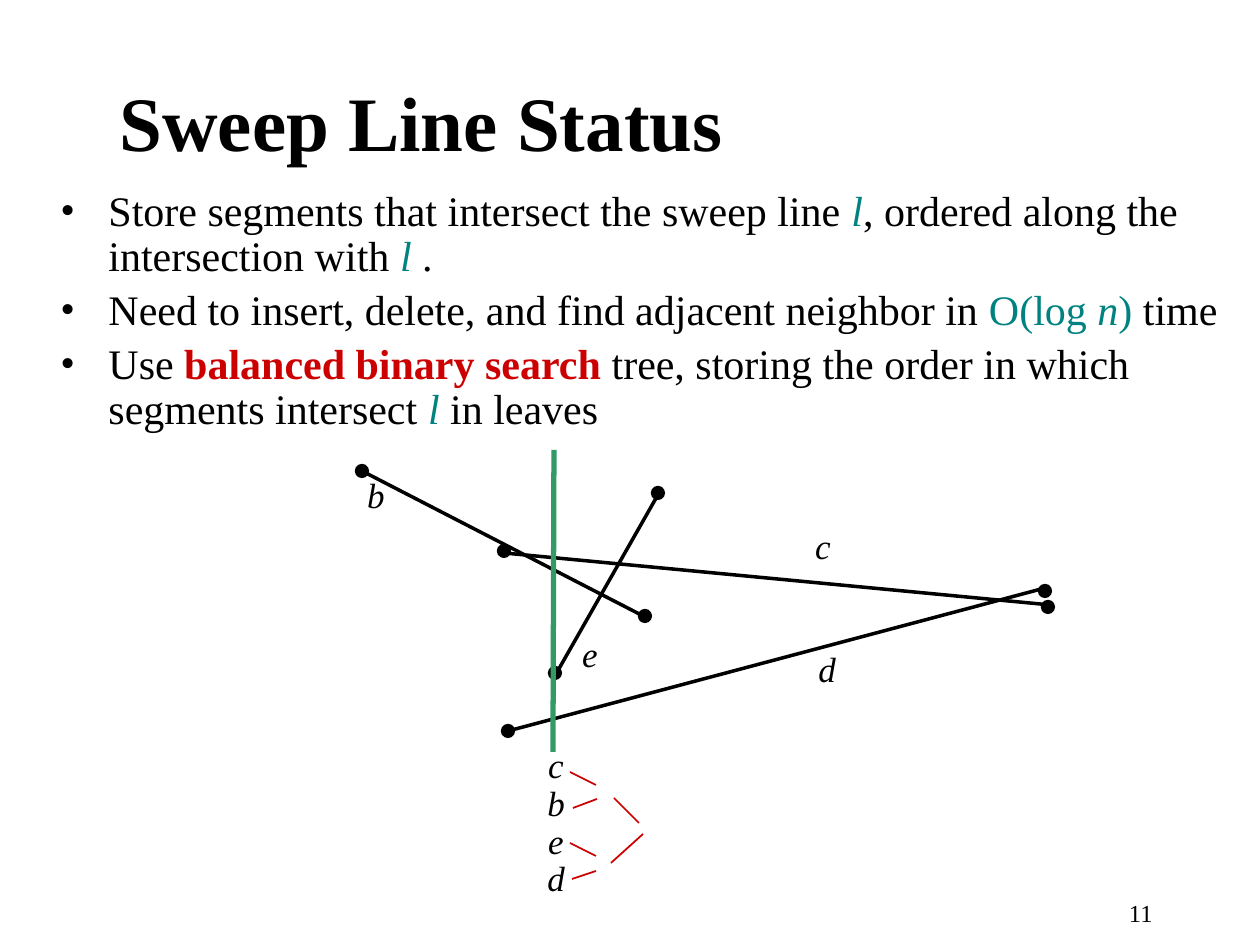
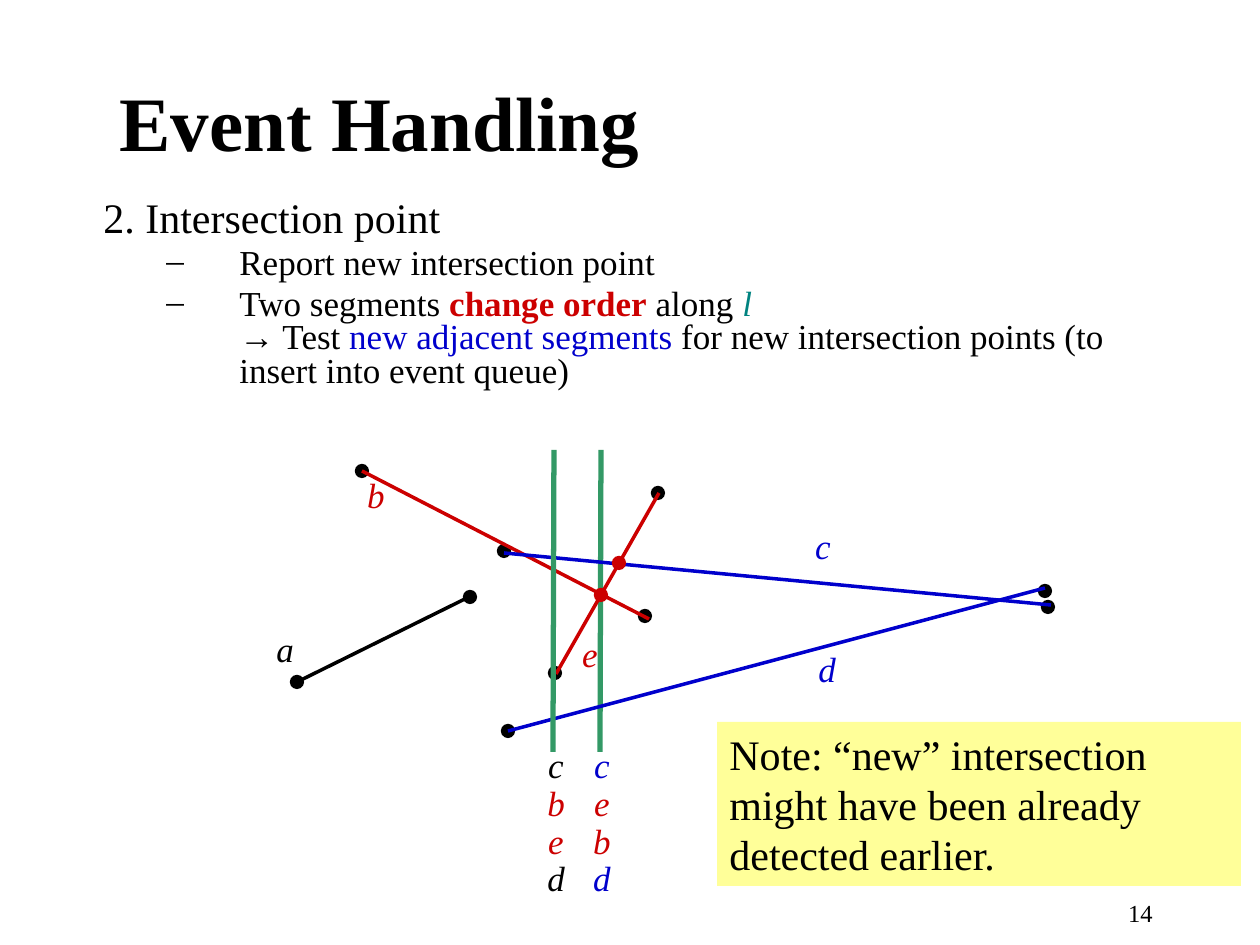
from pptx import Presentation
from pptx.dml.color import RGBColor
from pptx.enum.shapes import MSO_CONNECTOR, MSO_SHAPE
from pptx.enum.text import MSO_ANCHOR, PP_ALIGN
from pptx.oxml.ns import qn
from pptx.util import Emu, Pt
from lxml.etree import SubElement

BLACK = RGBColor(0x00, 0x00, 0x00)
TEAL = RGBColor(0x00, 0x83, 0x80)
RED = RGBColor(0xCC, 0x00, 0x00)
BLUE = RGBColor(0x00, 0x00, 0xCC)
GREEN = RGBColor(0x33, 0x99, 0x66)
YELLOW = RGBColor(0xFF, 0xFF, 0x99)
FONT = "Times New Roman"
PX = 914400 / 126
DOT = 13

SEGMENTS = {
    "a": ((297, 682), (471, 596)),
    "b": ((362, 471), (649, 619)),
    "c": ((504, 553), (1051, 605)),
    "d": ((508, 731), (1045, 588)),
    "e": ((556, 674), (659, 493)),
}
ENDPOINTS = {
    "a": ((297, 682), (470, 597)),
    "b": ((362, 471), (645, 616)),
    "c": ((504, 551), (1048, 607)),
    "d": ((508, 731), (1045, 591)),
    "e": ((555, 673), (658, 493)),
}
LABELS = {"a": (258, 621), "b": (349, 467), "c": (796, 518),
          "d": (800, 641), "e": (563, 626)}
TREE_BRANCHES = [
    ((570, 772), (596, 785)), ((573, 808), (597, 799)),
    ((570, 843), (596, 856)), ((572, 879), (596, 871)),
    ((614, 798), (639, 823)), ((611, 863), (643, 834)),
]

# A run is (text, colour, style); a paragraph is (size, margin, indent, bullet, runs).
SLIDES = [
    {
        "title": "Sweep Line Status",
        "number": "11",
        "body_at": (48, 184, 1188, 344),
        "line_spacing": 0.9,
        "body": [
            (24, 48, -48, "•", [
                ("Store segments that intersect the sweep line ", BLACK, ""),
                ("l", TEAL, "i"),
                (", ordered along the intersection with ", BLACK, ""),
                ("l", TEAL, "i"), (" .", BLACK, "")]),
            (24, 48, -48, "•", [
                ("Need to insert, delete, and find adjacent neighbor in ", BLACK, ""),
                ("O(log ", TEAL, ""), ("n", TEAL, "i"), (")", TEAL, ""),
                (" time", BLACK, "")]),
            (24, 48, -48, "•", [
                ("Use ", BLACK, ""), ("balanced binary search", RED, "b"),
                (" tree, storing the order in which segments intersect ", BLACK, ""),
                ("l ", TEAL, "i"), ("in leaves", BLACK, "")]),
        ],
        "segments": {"b": BLACK, "c": BLACK, "d": BLACK, "e": BLACK},
        "sweeps": [(554, [("c\nb\ne\nd", BLACK, "i")])],
        "branches": TREE_BRANCHES,
        "crossings": [],
        "note": None,
    },
    {
        "title": "Event Handling",
        "number": "14",
        "body_at": (91, 195, 1099, 234),
        "line_spacing": 0.8,
        "body": [
            (24, 84, -84, None, [("2. Intersection point", BLACK, "")]),
            (20, 136, -73, "–", [("Report new intersection point", BLACK, "")]),
            (20, 136, -73, "–", [
                ("Two segments ", BLACK, ""), ("change order", RED, "b"),
                (" along ", BLACK, ""), ("l\n", TEAL, "i"), ("→ Test ", BLACK, ""),
                ("new adjacent segments", BLUE, ""),
                (" for new intersection points (to insert into event queue)", BLACK, "")]),
        ],
        "segments": {"a": BLACK, "b": RED, "c": BLUE, "d": BLUE, "e": RED},
        "sweeps": [
            (554, [("c\n", BLACK, "i"), ("b\ne\n", RED, "i"), ("d", BLACK, "i")]),
            (600, [("c\n", BLUE, "i"), ("e\nb\n", RED, "i"), ("d", BLUE, "i")]),
        ],
        "branches": [],
        "crossings": [(601, 595), (619, 563)],
        "note": "Note: “new” intersection might have been already detected earlier.",
    },
]


def write(shape, at, paragraphs, **paragraph_format):
    """Place a shape and fill it with formatted paragraphs."""
    for side, length in zip(("left", "top", "width", "height"), at):
        setattr(shape, side, Emu(round(length * PX)))
    frame = shape.text_frame
    frame.word_wrap = True
    for index, (size, margin, indent, bullet, runs) in enumerate(paragraphs):
        para = frame.add_paragraph() if index else frame.paragraphs[0]
        for name, value in paragraph_format.items():
            setattr(para, name, value)
        properties = para._p.get_or_add_pPr()
        properties.set("marL", str(round(margin * PX)))
        properties.set("indent", str(round(indent * PX)))
        if bullet:
            para.space_before = Pt(size * 0.2)
            SubElement(properties, qn("a:buFont"), typeface=FONT)
            SubElement(properties, qn("a:buChar"), char=bullet)
        for text, colour, style in runs:
            for line_number, line in enumerate(text.split("\n")):
                if line_number:
                    para.add_line_break()
                if line:
                    span = para.add_run()
                    span.text = line
                    span.font.color.rgb = colour
                    font_format = {"name": FONT, "size": Pt(size),
                                   "bold": style == "b", "italic": style == "i"}
                    for name, value in font_format.items():
                        setattr(span.font, name, value)


def draw_line(page, ends, colour, width):
    (x1, y1), (x2, y2) = ends
    line = page.shapes.add_connector(
        MSO_CONNECTOR.STRAIGHT, *(Emu(round(v * PX)) for v in (x1, y1, x2, y2)))
    line.line.color.rgb = colour
    line.line.width = Pt(width)
    SubElement(line._element.spPr, qn("a:effectLst"))


deck = Presentation()
deck.slide_width = Emu(round(1260 * PX))
deck.slide_height = Emu(round(945 * PX))

for content in SLIDES:
    page = deck.slides.add_slide(deck.slide_layouts[5])
    title = page.shapes.title
    write(title, (107, 42, 1040, 158),
          [(44, 0, 0, None, [(content["title"], BLACK, "b")])], alignment=PP_ALIGN.LEFT)
    title.text_frame.vertical_anchor = MSO_ANCHOR.MIDDLE
    write(page.shapes.add_textbox(0, 0, 0, 0), (1062, 892, 103, 32),
          [(14, 0, 0, None, [(content["number"], BLACK, "")])], alignment=PP_ALIGN.RIGHT)
    write(page.shapes.add_textbox(0, 0, 0, 0), content["body_at"], content["body"],
          line_spacing=content["line_spacing"])

    dots = [(centre, BLACK) for name in content["segments"] for centre in ENDPOINTS[name]]
    dots += [(centre, RED) for centre in content["crossings"]]
    endpoint_count = len(dots) - len(content["crossings"])

    # Later sweep positions lie behind the segments, the first one in front.
    first_sweep, *later_sweeps = [x for x, order in content["sweeps"]]
    lines = [(((x + 1, 450), (x, 752)), GREEN, 3) for x in later_sweeps]
    lines += [(SEGMENTS[name], colour, 2) for name, colour in content["segments"].items()]
    lines.append((((first_sweep, 450), (first_sweep - 1, 752)), GREEN, 3))
    lines += [(branch, RED, 1) for branch in content["branches"]]

    for index, ((x, y), colour) in enumerate(dots):
        if index == endpoint_count:
            for line in lines:
                draw_line(page, *line)
        dot = page.shapes.add_shape(
            MSO_SHAPE.OVAL, *(Emu(round(v * PX)) for v in (x - DOT / 2, y - DOT / 2, DOT, DOT)))
        dot.shadow.inherit = False
        dot.fill.solid()
        dot.fill.fore_color.rgb = colour
        dot.line.color.rgb = colour
        dot.line.width = Pt(0.75)
    if not content["crossings"]:
        for line in lines:
            draw_line(page, *line)

    for name, colour in content["segments"].items():
        write(page.shapes.add_textbox(0, 0, 0, 0), (*LABELS[name], 54, 54),
              [(20, 0, 0, None, [(name, colour, "i")])], alignment=PP_ALIGN.CENTER)
    for x, order in content["sweeps"]:
        write(page.shapes.add_textbox(0, 0, 0, 0), (x - 25, 742, 54, 164),
              [(20, 0, 0, None, order)], alignment=PP_ALIGN.CENTER, line_spacing=0.9)

    if content["note"]:
        note = page.shapes.add_shape(MSO_SHAPE.RECTANGLE, 0, 0, 0, 0)
        note.shadow.inherit = False
        note.fill.solid()
        note.fill.fore_color.rgb = YELLOW
        note.line.fill.background()
        note.text_frame.vertical_anchor = MSO_ANCHOR.TOP
        write(note, (717, 722, 524, 164),
              [(24, 0, 0, None, [(content["note"], BLACK, "")])], alignment=PP_ALIGN.LEFT)

deck.save("out.pptx")
